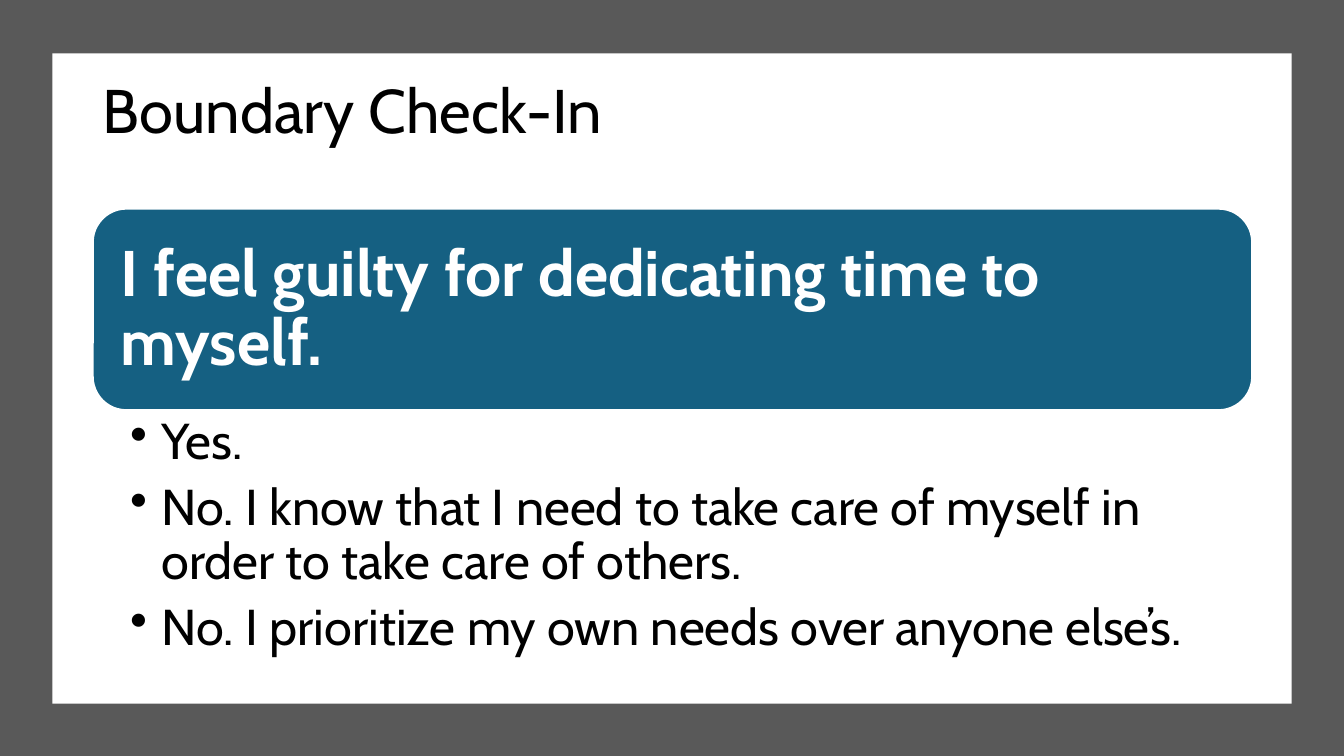
import dataclasses

import pptx
import pptx.dml.color
import pptx.enum.shapes
import pptx.enum.text
import pptx.oxml.ns
import pptx.util
from lxml import etree

Inches = pptx.util.Inches
Pt = pptx.util.Pt
Shape = pptx.enum.shapes.MSO_SHAPE
Anchor = pptx.enum.text.MSO_ANCHOR


@dataclasses.dataclass(frozen=True)
class Theme:
    font: str = "Cabin"
    frame: str = "595959"
    white: str = "FFFFFF"
    black: str = "000000"
    blue: str = "156082"
    title: int = 44
    banner: int = 46
    answer: int = 36


THEME = Theme()


def color(code):
    return pptx.dml.color.RGBColor.from_string(code)


def add_block(slide, kind, box, fill, line=None):
    """Draw a filled shape, with an outline if a line colour is given."""
    shape = slide.shapes.add_shape(kind, *map(Inches, box))
    shape.shadow.inherit = False
    shape.fill.solid()
    shape.fill.fore_color.rgb = color(fill)
    if line:
        shape.line.color.rgb = color(line)
        shape.line.width = Pt(1.5)
    else:
        shape.line.fill.background()


def add_bullet(para, indent):
    """Give a paragraph a round bullet with a hanging indent."""
    props = para._p.get_or_add_pPr()
    props.set("marL", str(Inches(indent)))
    props.set("indent", str(-Inches(indent)))
    mark = etree.SubElement(props, pptx.oxml.ns.qn("a:buChar"))
    mark.set("char", "•")


def add_text(slide, box, lines, *, size, ink, bold=False,
             anchor=Anchor.MIDDLE, pad=(0.1, 0.05), after=0, bullet=None):
    """Place a text box; pad is the side inset, then the top and bottom one."""
    frame = slide.shapes.add_textbox(*map(Inches, box)).text_frame
    frame.word_wrap = True
    frame.vertical_anchor = anchor
    frame.margin_left = frame.margin_right = Inches(pad[0])
    frame.margin_top = frame.margin_bottom = Inches(pad[1])
    for i, line in enumerate(lines):
        para = frame.paragraphs[0] if i == 0 else frame.add_paragraph()
        para.line_spacing = 0.9
        para.space_after = Pt(after)
        if bullet:
            add_bullet(para, bullet)
        run = para.add_run()
        run.text = line
        run.font.name = THEME.font
        run.font.size = Pt(size)
        run.font.bold = bold
        run.font.color.rgb = color(ink)


def main():
    deck = pptx.Presentation()
    deck.slide_width, deck.slide_height = Inches(13.33), Inches(7.5)
    slide = deck.slides.add_slide(deck.slide_layouts[6])

    # Dark frame and white panel
    add_block(slide, Shape.RECTANGLE, (0, 0, 13.33, 7.5), THEME.frame)
    add_block(slide, Shape.RECTANGLE, (0.52, 0.53, 12.29, 6.45), THEME.white)

    # Title
    add_text(slide, (0.92, 0.4, 11.5, 1.45), ["Boundary Check-In"],
             size=THEME.title, ink=THEME.black)

    # Statement banner
    add_block(slide, Shape.ROUNDED_RECTANGLE, (0.92, 2.07, 11.5, 2),
              THEME.blue, THEME.white)
    add_text(slide, (1.01, 2.17, 11.3, 1.81),
             ["I feel guilty for dedicating time to myself."],
             size=THEME.banner, ink=THEME.white, bold=True, pad=(0.19, 0.19))

    # Answers
    answers = [
        "Yes.",
        "No. I know that I need to take care of myself in order to "
        "take care of others.",
        "No. I prioritize my own needs over anyone else’s.",
    ]
    add_text(slide, (0.92, 4.07, 11.5, 2.6), answers, size=THEME.answer,
             ink=THEME.black, anchor=Anchor.TOP, pad=(0.37, 0.06), after=8,
             bullet=0.31)

    deck.save("out.pptx")


if __name__ == "__main__":
    main()
